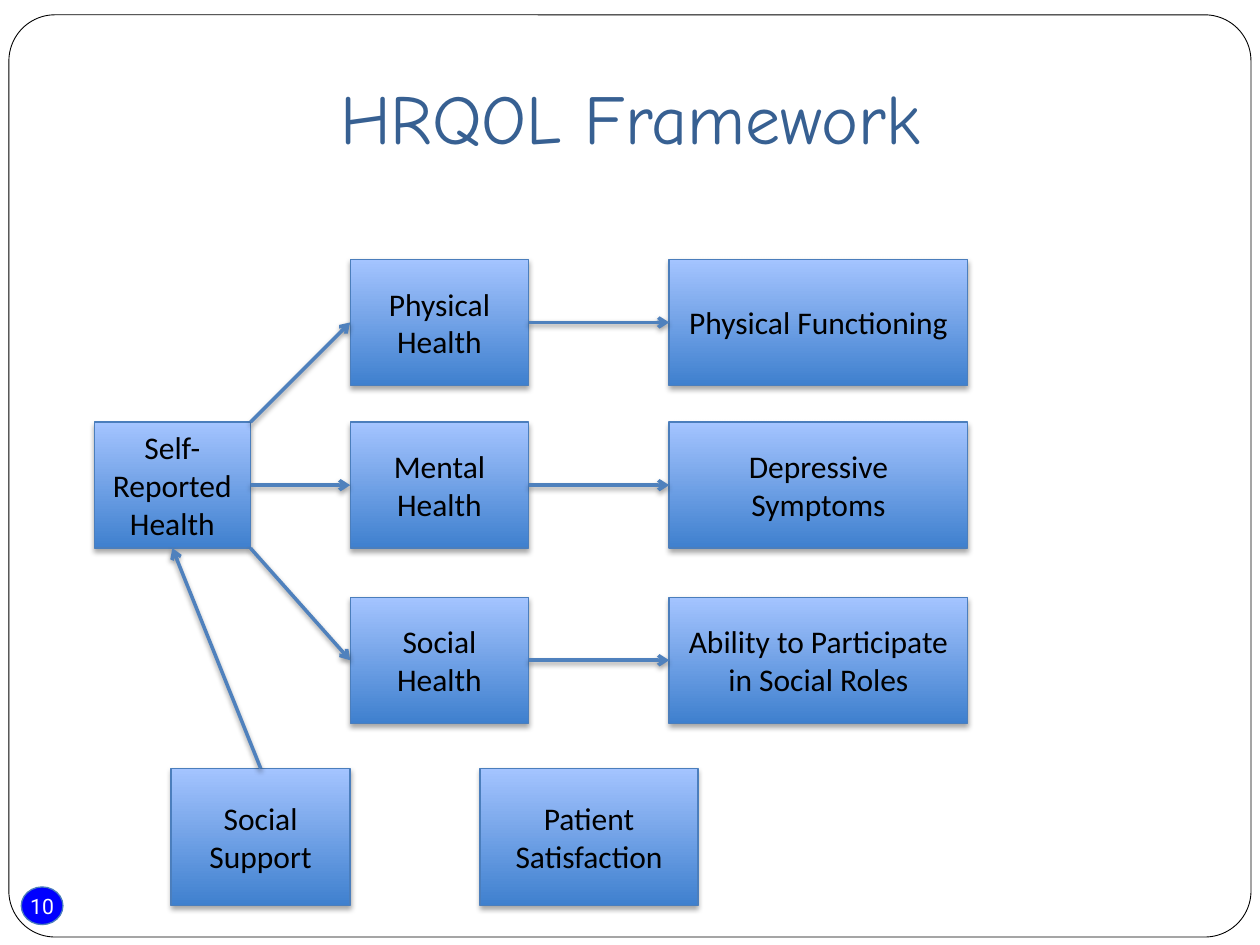
from dataclasses import dataclass

from lxml.etree import SubElement
from pptx import Presentation
from pptx.dml.color import RGBColor as Rgb
from pptx.enum.shapes import MSO_CONNECTOR as Link, MSO_SHAPE as Kind
from pptx.enum.text import MSO_ANCHOR as Anchor, PP_ALIGN as Align
from pptx.oxml.ns import qn
from pptx.util import Cm, Pt


@dataclass(frozen=True)
class Theme:
    ink: str = "000000"
    paper: str = "FFFFFF"
    badge: str = "0000FF"
    title: str = "376092"
    edge: str = "4B7EBC"
    arrow: str = "4F81BD"
    low: str = "3F80CE"
    high: str = "A4C4FF"
    head: float = 40
    body: float = 18
    note: float = 12.1


THEME = Theme()
TOP, LEFT, BOTTOM, RIGHT = range(4)


def tint(name):
    return Rgb.from_string(name)


def write(shape, text, size=THEME.body, font="Calibri", color=THEME.ink, inset=None):
    frame = shape.text_frame
    frame.word_wrap = True
    frame.vertical_anchor = Anchor.MIDDLE
    if inset is not None:
        frame.margin_left = frame.margin_right = Cm(inset)
        frame.margin_top = frame.margin_bottom = Cm(inset)
    para = frame.paragraphs[0]
    para.alignment = Align.CENTER
    run = para.add_run()
    run.text = text
    run.font.size = Pt(size)
    run.font.name = font
    run.font.color.rgb = tint(color)


def rule(part, color, width):
    part.line.color.rgb = tint(color)
    part.line.width = Pt(width)


def shade(part, alpha, drop):
    effects = SubElement(part._element.spPr, qn("a:effectLst"))
    outer = SubElement(effects, qn("a:outerShdw"), blurRad=str(Pt(3.1)),
                       dist=str(Pt(drop)), dir="5400000", rotWithShape="0")
    color = SubElement(outer, qn("a:srgbClr"), val=THEME.ink)
    SubElement(color, qn("a:alpha"), val=str(alpha * 1000))


def add_box(slide, text, x, y, w, h):
    box = slide.shapes.add_shape(Kind.RECTANGLE, Cm(x), Cm(y), Cm(w), Cm(h))
    box.fill.gradient()
    box.fill.gradient_angle = 90
    for stop, color in zip(box.fill.gradient_stops, (THEME.low, THEME.high)):
        stop.color.rgb = tint(color)
    rule(box, THEME.edge, 0.75)
    shade(box, 35, 1.8)
    write(box, text)
    return box


def add_arrow(slide, start, end, side=None, goal=LEFT, spot=(0, 0)):
    line = slide.shapes.add_connector(Link.STRAIGHT, *spot, *spot)
    if side is not None:
        line.begin_connect(start, side)
    line.end_connect(end, goal)
    rule(line, THEME.arrow, 2)
    SubElement(line._element.spPr.find(qn("a:ln")), qn("a:tailEnd"), type="arrow")
    shade(line, 38, 1.6)


def add_frame(slide, x, y, w, h):
    badge = slide.shapes.add_shape(Kind.OVAL, Cm(x + 0.25), Cm(y + h - 1.01),
                                   Cm(0.84), Cm(0.76))
    badge.shadow.inherit = False
    badge.fill.solid()
    badge.fill.fore_color.rgb = tint(THEME.badge)
    rule(badge, THEME.edge, 0.75)
    write(badge, "10", size=THEME.note, font="Roboto", color=THEME.paper, inset=0)

    frame = slide.shapes.add_shape(Kind.ROUNDED_RECTANGLE, Cm(x), Cm(y), Cm(w), Cm(h))
    frame.shadow.inherit = False
    frame.adjustments[0] = 0.05
    frame.fill.background()
    rule(frame, THEME.ink, 0.5)


def add_title(slide, x, y, w, h):
    title = slide.shapes.add_textbox(Cm(x), Cm(y), Cm(w), Cm(h))
    write(title, "HRQOL Framework", size=THEME.head, font="Comic Neue",
          color=THEME.title)


def add_model(slide, x, y):
    high = 2.54
    rows = (
        (0, "Physical Health", "Physical Functioning"),
        (3.28, "Mental Health", "Depressive Symptoms"),
        (6.81, "Social Health", "Ability to Participate in Social Roles"),
    )
    root = add_box(slide, "Self-Reported Health", x, y + rows[1][0], 3.15, high)
    edge = root.left + root.width
    exits = (
        {"spot": (edge, root.top)},
        {"side": RIGHT},
        {"spot": (edge, root.top + root.height)},
    )
    for (drop, health, result), leave in zip(rows, exits):
        state = add_box(slide, health, x + 5.16, y + drop, 3.6, high)
        effect = add_box(slide, result, x + 11.59, y + drop, 6.02, high)
        add_arrow(slide, root, state, **leave)
        add_arrow(slide, state, effect, side=RIGHT)
    return root


def add_base(slide, root, x, y, h):
    aid = add_box(slide, "Social Support", x, y, 3.61, h)
    add_box(slide, "Patient Satisfaction", x + 6.23, y, 4.39, h)
    add_arrow(slide, aid, root, side=TOP, goal=BOTTOM)


def main():
    deck = Presentation()
    deck.slide_width, deck.slide_height = Cm(25.4), Cm(19.05)
    slide = deck.slides.add_slide(deck.slide_layouts[6])
    add_frame(slide, 0.18, 0.3, 25.04, 18.59)
    add_title(slide, 1.27, 0.76, 22.86, 3.18)
    root = add_model(slide, 1.9, 5.23)
    add_base(slide, root, 3.45, 15.49, 2.77)
    deck.save("out.pptx")


if __name__ == "__main__":
    main()
